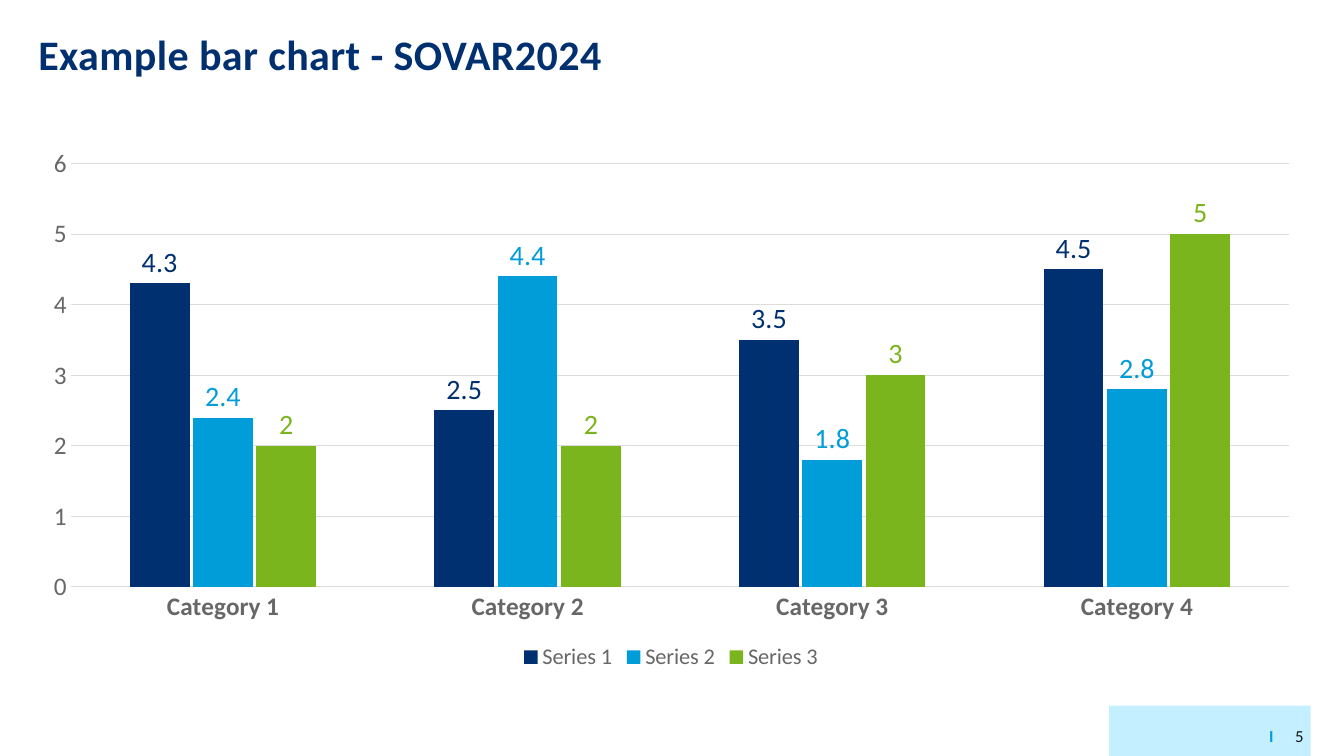
from lxml.etree import SubElement
from pptx import Presentation
from pptx.chart.data import CategoryChartData
from pptx.dml.color import RGBColor
from pptx.enum.chart import (XL_CHART_TYPE, XL_LABEL_POSITION,
                             XL_LEGEND_POSITION, XL_TICK_MARK)
from pptx.enum.text import MSO_ANCHOR, PP_ALIGN
from pptx.oxml.ns import qn
from pptx.util import Inches, Pt

WIDTH, HEIGHT = Inches(13.33), Inches(7.5)
FONT = "Calibri"
NAVY = RGBColor(0x00, 0x30, 0x6F)
BLUE = RGBColor(0x00, 0x9D, 0xD9)
GREEN = RGBColor(0x7A, 0xB5, 0x1D)
PALE_BLUE = RGBColor(0xC4, 0xEF, 0xFF)
INK = RGBColor(0x15, 0x15, 0x15)
GREY = RGBColor(0x67, 0x67, 0x67)
GRID = RGBColor(0xDC, 0xDC, 0xDC)

CATEGORIES = [f"Category {n}" for n in range(1, 5)]
SERIES = [
    ("Series 1", (4.3, 2.5, 3.5, 4.5), NAVY),
    ("Series 2", (2.4, 4.4, 1.8, 2.8), BLUE),
    ("Series 3", (2, 2, 3, 5), GREEN),
]
PLOT_SHARES = {"x": 0.033, "y": 0.049, "w": 0.948, "h": 0.787}


def share(left, top, width, height):
    """Turn percentages of the slide into a box in EMU."""
    return [int(part * side / 100) for part, side in
            zip((left, top, width, height), (WIDTH, HEIGHT) * 2)]


def apply(target, **values):
    for name, value in values.items():
        setattr(target, name, value)


def style_font(font, size, color, bold=False):
    apply(font, name=FONT, size=Pt(size), bold=bold)
    font.color.rgb = color


def add_title(slide, text):
    title = slide.shapes.title
    apply(title, **dict(zip(("left", "top", "width", "height"),
                            share(2.1, 3.87, 82.75, 19.33))))
    frame = title.text_frame
    apply(frame, vertical_anchor=MSO_ANCHOR.TOP, word_wrap=True)
    paragraph = frame.paragraphs[0]
    apply(paragraph, alignment=PP_ALIGN.LEFT, line_spacing=0.9)
    run = paragraph.add_run()
    run.text = text
    style_font(run.font, 30, NAVY, bold=True)
    run.font._element.set("spc", "30")


def add_footer_text(slide, box, text, color, bold=False):
    frame = slide.shapes.add_textbox(*share(*box)).text_frame
    apply(frame, word_wrap=True, vertical_anchor=MSO_ANCHOR.MIDDLE)
    paragraph = frame.paragraphs[0]
    paragraph.alignment = PP_ALIGN.RIGHT
    run = paragraph.add_run()
    run.text = text
    style_font(run.font, 12, color, bold)


def curve(points, steps=16):
    """Sample a cubic Bezier curve, leaving out its start point."""
    for step in range(1, steps + 1):
        t = step / steps
        weights = ((1 - t) ** 3, 3 * t * (1 - t) ** 2, 3 * t * t * (1 - t), t ** 3)
        yield tuple(sum(w * p[axis] for w, p in zip(weights, points))
                    for axis in (0, 1))


def add_corner_wave(slide):
    lower = [(11.05, 7.5), (11.14, 7.48), (11.23, 7.47), (11.32, 7.45)]
    upper = [lower[-1], (11.98, 7.32), (12.61, 7.11), (13.21, 6.78)]
    builder = slide.shapes.build_freeform(13.33, 6.71, scale=Inches(1))
    builder.add_line_segments([(13.33, 7.5), (11.03, 7.5), lower[0],
                               *curve(lower), *curve(upper)])
    wave = builder.convert_to_shape()
    wave.shadow.inherit = False
    wave.fill.solid()
    wave.fill.fore_color.rgb = PALE_BLUE
    wave.line.fill.background()


def style_line(line):
    line.width = Pt(0.75)
    line.color.rgb = GRID


def place_plot(chart):
    """Fix the inner plot area as shares of the chart."""
    plot_area = chart._chartSpace.chart.plotArea
    layout = plot_area.find(qn("c:layout"))
    if layout is None:
        layout = SubElement(plot_area, qn("c:layout"))
        plot_area.insert(0, layout)
    manual = SubElement(layout, qn("c:manualLayout"))
    settings = {"layoutTarget": "inner", "xMode": "edge", "yMode": "edge",
                **PLOT_SHARES}
    for tag, value in settings.items():
        SubElement(manual, qn(f"c:{tag}")).set("val", str(value))


def style_axes(chart):
    for axis, bold in ((chart.category_axis, True), (chart.value_axis, False)):
        apply(axis, major_tick_mark=XL_TICK_MARK.NONE,
              minor_tick_mark=XL_TICK_MARK.NONE)
        style_font(axis.tick_labels.font, 18, GREY, bold)
    style_line(chart.category_axis.format.line)
    values = chart.value_axis
    apply(values, minimum_scale=0, maximum_scale=6, major_unit=1,
          has_major_gridlines=True)
    values.format.line.fill.background()
    style_line(values.major_gridlines.format.line)


def add_bar_chart(slide):
    data = CategoryChartData()
    data.categories = CATEGORIES
    for name, values, _ in SERIES:
        data.add_series(name, values)
    chart = slide.shapes.add_chart(XL_CHART_TYPE.COLUMN_CLUSTERED,
                                   *share(2.1, 18.13, 95.65, 71.2), data).chart
    apply(chart, has_title=False, has_legend=True)
    style_font(chart.font, 10, INK)
    apply(chart.legend, position=XL_LEGEND_POSITION.BOTTOM,
          include_in_layout=False)
    style_font(chart.legend.font, 16, GREY)
    style_axes(chart)
    plot = chart.plots[0]
    apply(plot, gap_width=198, overlap=-6, vary_by_categories=False)
    for series, (_, _, color) in zip(plot.series, SERIES):
        series.format.fill.solid()
        series.format.fill.fore_color.rgb = color
        labels = series.data_labels
        apply(labels, show_value=True, position=XL_LABEL_POSITION.OUTSIDE_END)
        style_font(labels.font, 20, color)
    place_plot(chart)


def main():
    deck = Presentation()
    apply(deck, slide_width=WIDTH, slide_height=HEIGHT)
    slide = deck.slides.add_slide(deck.slide_layouts[5])
    add_corner_wave(slide)
    add_footer_text(slide, (92.65, 94.67, 2.85, 5.33), "I", BLUE, bold=True)
    add_title(slide, "Example bar chart - SOVAR2024")
    add_bar_chart(slide)
    add_footer_text(slide, (75.24, 94.67, 22.5, 5.33), "5", INK)
    deck.save("out.pptx")


if __name__ == "__main__":
    main()
